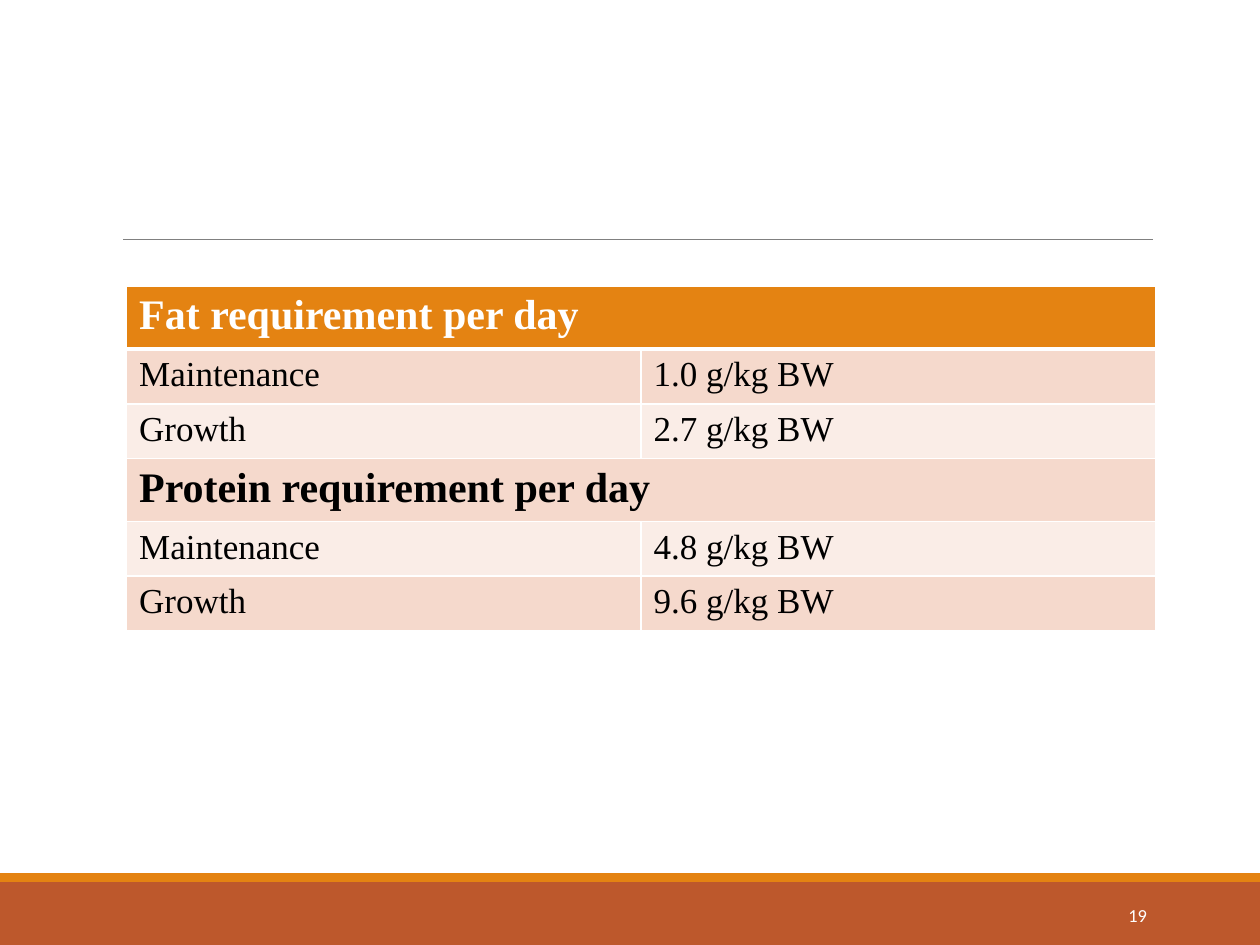
import pptx
import pptx.dml.color
import pptx.enum.shapes
import pptx.enum.text
import pptx.oxml
import pptx.oxml.ns
import pptx.util
from lxml import etree

Pt = pptx.util.Pt


def color(value):
    return pptx.dml.color.RGBColor.from_string(value)


def add_border(cell, side, width):
    """Draw a white line on one side (L, R, T or B) of a table cell."""
    properties = cell._tc.get_or_add_tcPr()
    properties.append(pptx.oxml.parse_xml(
        f'<a:ln{side} {pptx.oxml.ns.nsdecls("a")} w="{Pt(width)}"><a:solidFill>'
        f'<a:srgbClr val="FFFFFF"/></a:solidFill></a:ln{side}>'))


presentation = pptx.Presentation()
presentation.slide_width = Pt(720)
presentation.slide_height = Pt(540)
slide = presentation.slides.add_slide(presentation.slide_layouts[6])

# Footer bands
for top, height, fill in [(504, 36, "BD582C"), (499, 5, "E48312")]:
    band = slide.shapes.add_shape(
        pptx.enum.shapes.MSO_SHAPE.RECTANGLE, 0, Pt(top), Pt(720), Pt(height))
    band.shadow.inherit = False
    band.fill.solid()
    band.fill.fore_color.rgb = color(fill)
    band.line.fill.background()

# Rule above the table
rule = slide.shapes.add_connector(
    pptx.enum.shapes.MSO_CONNECTOR.STRAIGHT, Pt(70.5), Pt(136.8), Pt(659), Pt(136.8))
rule.line.color.rgb = color("808080")
rule.line.width = Pt(0.5)
etree.SubElement(rule._element.spPr, pptx.oxml.ns.qn("a:effectLst"))

# Page number
page_number = slide.shapes.add_textbox(Pt(584.6), Pt(508.3), Pt(77.8), Pt(28.8))
text_frame = page_number.text_frame
text_frame.word_wrap = True
text_frame.vertical_anchor = pptx.enum.text.MSO_ANCHOR.MIDDLE
text_frame.text = "19"
paragraph = text_frame.paragraphs[0]
paragraph.alignment = pptx.enum.text.PP_ALIGN.RIGHT
font = paragraph.runs[0].font
font.name = "Calibri"
font.size = Pt(10.5)
font.color.rgb = color("FFFFFF")

# Requirements table: a row with one entry is a heading across both columns
rows = [
    ["Fat requirement per day"],
    ["Maintenance", "1.0 g/kg BW"],
    ["Growth", "2.7 g/kg BW"],
    ["Protein requirement per day"],
    ["Maintenance", "4.8 g/kg BW"],
    ["Growth", "9.6 g/kg BW"],
]
row_height = 28
table = slide.shapes.add_table(
    len(rows), 2, Pt(72.3), Pt(163.5), Pt(588), Pt(row_height * len(rows))).table

for row_index, entries in enumerate(rows):
    is_heading = len(entries) == 1
    if row_index == 0:
        fill = "E48312"
    else:
        fill = "F5D9CC" if row_index % 2 else "FAEDE7"
    for column_index in range(2):
        cell = table.cell(row_index, column_index)
        border_widths = {"L": 1, "R": 1, "T": 3 if row_index == 1 else 1,
                         "B": 3 if row_index == 0 else 1}
        for side, width in border_widths.items():
            add_border(cell, side, width)
        cell.fill.solid()
        cell.fill.fore_color.rgb = color(fill)
    if is_heading:
        table.cell(row_index, 0).merge(table.cell(row_index, 1))
    for column_index, entry in enumerate(entries):
        cell = table.cell(row_index, column_index)
        cell.text_frame.text = entry
        font = cell.text_frame.paragraphs[0].runs[0].font
        font.name = "Times New Roman"
        font.size = Pt(24 if is_heading else 20)
        font.bold = is_heading
        font.color.rgb = color("FFFFFF" if row_index == 0 else "000000")

presentation.save("out.pptx")
